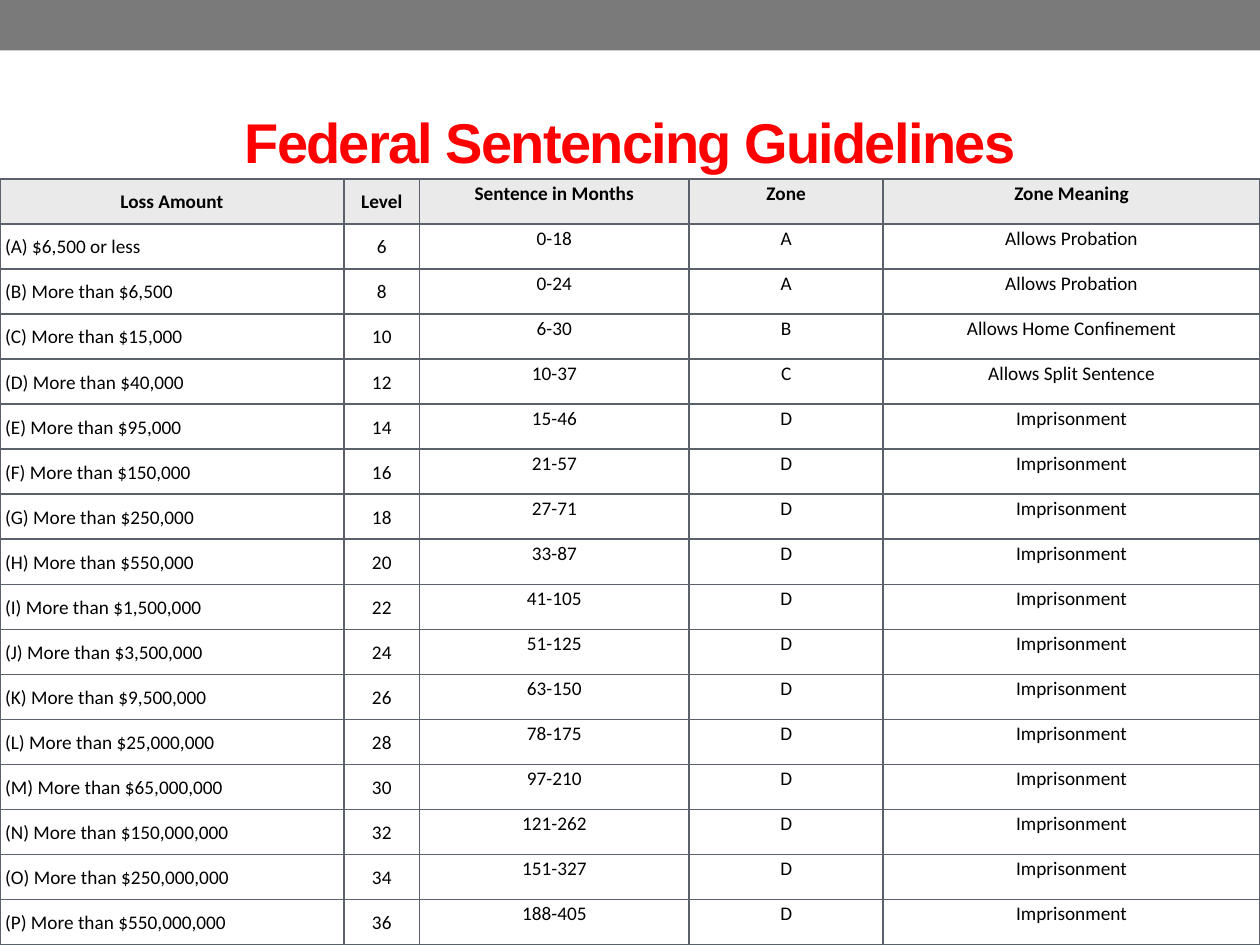
from dataclasses import dataclass
from typing import NamedTuple

from lxml import etree
from pptx import Presentation
from pptx import util as u
from pptx.dml.color import RGBColor
from pptx.enum import shapes, text
from pptx.oxml import ns


@dataclass(frozen=True)
class Theme:
    band: str = "7A7A7A"
    title: str = "FF0000"
    ink: str = "000000"
    header: str = "EAEAEA"
    body: str = "FFFFFF"
    border: str = "5B616B"
    title_font: str = "Arial"
    table_font: str = "Calibri"
    title_size: float = 32
    table_size: float = 11
    title_spacing: float = -1
    border_width: float = 1


class Area(NamedTuple):
    left: float
    top: float
    width: float
    height: float


class Column(NamedTuple):
    heading: str
    share: float
    align: text.PP_ALIGN
    anchor: text.MSO_ANCHOR
    margin: float


class Offence(NamedTuple):
    loss: str
    months: str
    zone: str


THEME = Theme()
WIDTH, HEIGHT = u.Inches(10), u.Inches(7.5)
BAND_AREA = Area(0, 0, 100, 5.33)
TITLE_AREA = Area(5, 7.73, 90, 14.4)
TABLE_AREA = Area(0, 18.93, 100, 81.07)
LEFT, CENTER = text.PP_ALIGN.LEFT, text.PP_ALIGN.CENTER
TOP, MIDDLE = text.MSO_ANCHOR.TOP, text.MSO_ANCHOR.MIDDLE

COLUMNS = [
    Column("Loss Amount", 27.3, LEFT, MIDDLE, 0.04),
    Column("Level", 6, CENTER, MIDDLE, 0.04),
    Column("Sentence in Months", 21.4, CENTER, TOP, 0.01),
    Column("Zone", 15.4, CENTER, TOP, 0.01),
    Column("Zone Meaning", 29.9, CENTER, TOP, 0.01),
]
ZONE_MEANINGS = {
    "A": "Allows Probation",
    "B": "Allows Home Confinement",
    "C": "Allows Split Sentence",
    "D": "Imprisonment",
}
OFFENCES = [
    Offence("(A) $6,500 or less", "0-18", "A"),
    Offence("(B) More than $6,500", "0-24", "A"),
    Offence("(C) More than $15,000", "6-30", "B"),
    Offence("(D) More than $40,000", "10-37", "C"),
    Offence("(E) More than $95,000", "15-46", "D"),
    Offence("(F) More than $150,000", "21-57", "D"),
    Offence("(G) More than $250,000", "27-71", "D"),
    Offence("(H) More than $550,000", "33-87", "D"),
    Offence("(I) More than $1,500,000", "41-105", "D"),
    Offence("(J) More than $3,500,000", "51-125", "D"),
    Offence("(K) More than $9,500,000", "63-150", "D"),
    Offence("(L) More than $25,000,000", "78-175", "D"),
    Offence("(M) More than $65,000,000", "97-210", "D"),
    Offence("(N) More than $150,000,000", "121-262", "D"),
    Offence("(O) More than $250,000,000", "151-327", "D"),
    Offence("(P) More than $550,000,000", "188-405", "D"),
]
FIRST_LEVEL, LEVEL_STEP = 6, 2


def share(total: int, percent: float) -> int:
    return round(total * percent / 100)


def place(area: Area) -> tuple[int, ...]:
    return tuple(share(total, percent) for total, percent in zip((WIDTH, HEIGHT) * 2, area))


def apply(target, values: dict) -> None:
    for name, value in values.items():
        setattr(target, name, value)


def write(para, words: str, font: str, size: float, color: str, bold: bool):
    span = para.add_run()
    span.text = words
    apply(span.font, {"name": font, "size": u.Pt(size), "bold": bold})
    span.font.color.rgb = RGBColor.from_string(color)
    return span


def paint(target, color: str) -> None:
    target.fill.solid()
    target.fill.fore_color.rgb = RGBColor.from_string(color)


def draw_band(page) -> None:
    band = page.shapes.add_shape(shapes.MSO_SHAPE.RECTANGLE, *place(BAND_AREA))
    band.shadow.inherit = False
    paint(band, THEME.band)
    band.line.fill.background()


def draw_title(page, words: str) -> None:
    box = page.shapes.add_textbox(*place(TITLE_AREA))
    apply(box.text_frame, {"word_wrap": True, "vertical_anchor": MIDDLE})
    para = box.text_frame.paragraphs[0]
    para.alignment = CENTER
    span = write(para, words, THEME.title_font, THEME.title_size, THEME.title, True)
    span.font._element.set("spc", str(round(THEME.title_spacing * 100)))


def draw_borders(cell) -> None:
    properties = cell._tc.get_or_add_tcPr()
    for side in ("L", "R", "T", "B"):
        line = etree.SubElement(properties, ns.qn(f"a:ln{side}"), w=str(u.Pt(THEME.border_width)))
        fill = etree.SubElement(line, ns.qn("a:solidFill"))
        etree.SubElement(fill, ns.qn("a:srgbClr"), val=THEME.border)


def fill_cell(cell, words: str, column: Column, heading: bool) -> None:
    draw_borders(cell)
    paint(cell, THEME.header if heading else THEME.body)
    sides = ("left", "right", "top", "bottom")
    apply(cell, {f"margin_{side}": u.Inches(column.margin) for side in sides})
    cell.vertical_anchor = column.anchor
    para = cell.text_frame.paragraphs[0]
    apply(para, {
        "alignment": CENTER if heading else column.align,
        "line_spacing": 1.07,
        "space_after": u.Pt(8),
    })
    write(para, words, THEME.table_font, THEME.table_size, THEME.ink, heading)


def draw_table(page) -> None:
    rows = [[column.heading for column in COLUMNS]]
    for index, offence in enumerate(OFFENCES):
        level = str(FIRST_LEVEL + LEVEL_STEP * index)
        rows.append([offence.loss, level, offence.months, offence.zone, ZONE_MEANINGS[offence.zone]])
    table = page.shapes.add_table(len(rows), len(COLUMNS), *place(TABLE_AREA)).table
    apply(table, {"first_row": False, "horz_banding": False})
    for grid_column, column in zip(table.columns, COLUMNS):
        grid_column.width = share(WIDTH, column.share)
    for row_index, row in enumerate(rows):
        for column_index, (words, column) in enumerate(zip(row, COLUMNS)):
            fill_cell(table.cell(row_index, column_index), words, column, row_index == 0)


def main() -> None:
    deck = Presentation()
    apply(deck, {"slide_width": WIDTH, "slide_height": HEIGHT})
    page = deck.slides.add_slide(deck.slide_layouts[6])
    draw_band(page)
    draw_title(page, "Federal Sentencing Guidelines")
    draw_table(page)
    deck.save("out.pptx")


if __name__ == "__main__":
    main()
